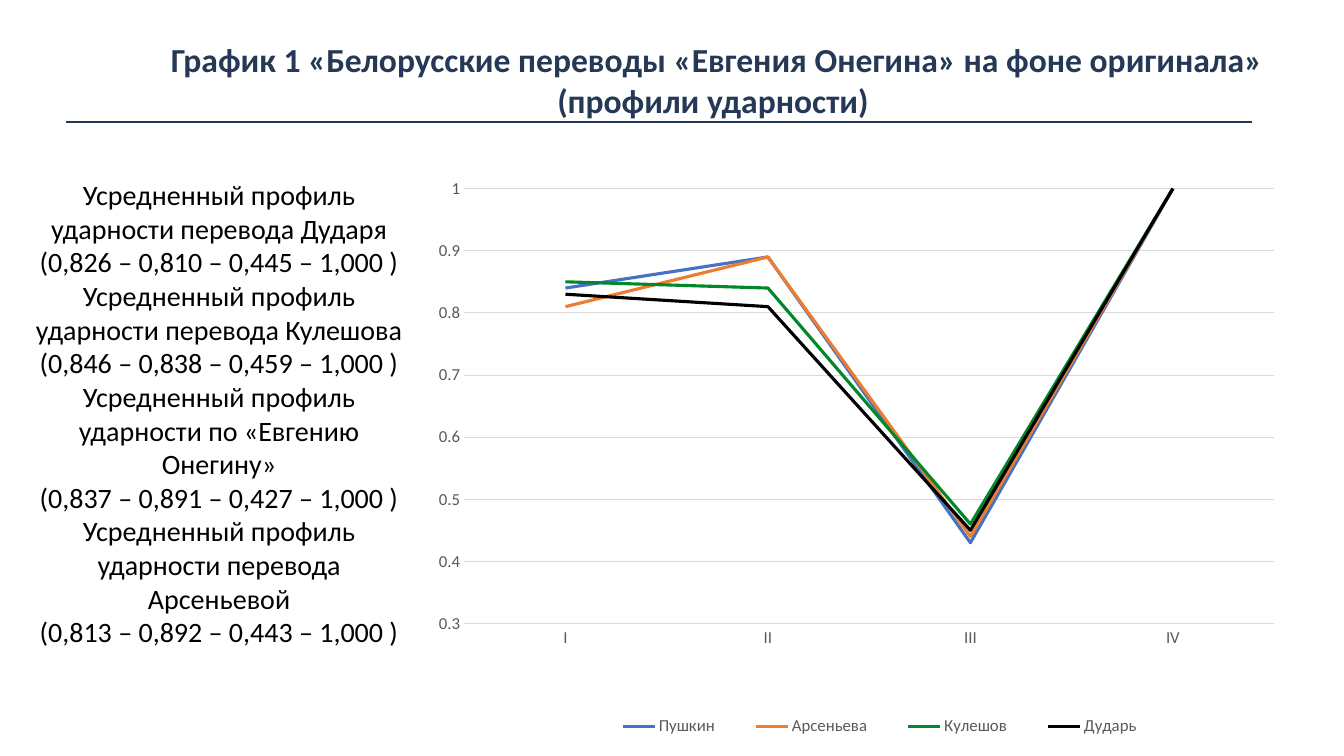
from lxml import etree
from pptx import Presentation
from pptx.chart.data import CategoryChartData
from pptx.dml.color import RGBColor
from pptx.enum.chart import XL_CHART_TYPE, XL_LEGEND_POSITION, XL_TICK_MARK
from pptx.enum.shapes import MSO_CONNECTOR
from pptx.enum.text import PP_ALIGN
from pptx.oxml.ns import qn
from pptx.util import Pt

LINE_CHART = XL_CHART_TYPE.LINE
BOTTOM = XL_LEGEND_POSITION.BOTTOM
NO_TICK = XL_TICK_MARK.NONE
STRAIGHT = MSO_CONNECTOR.STRAIGHT
CENTER = PP_ALIGN.CENTER

FONT = "Calibri"
NAVY = RGBColor(0x25, 0x39, 0x57)
BLACK = RGBColor(0, 0, 0)
GRAY = RGBColor(0x59, 0x59, 0x59)
PALE = RGBColor(0xD9, 0xD9, 0xD9)
BLUE = RGBColor(0x44, 0x72, 0xC4)
ORANGE = RGBColor(0xED, 0x7D, 0x31)
GREEN = RGBColor(0x00, 0x88, 0x2B)

TITLE = "График 1 «Белорусские переводы «Евгения Онегина» на фоне оригинала» (профили ударности) "
FEET = ("I", "II", "III", "IV")
SERIES = (
    ("Пушкин", BLUE, (0.84, 0.89, 0.43, 1)),
    ("Арсеньева", ORANGE, (0.81, 0.89, 0.44, 1)),
    ("Кулешов", GREEN, (0.85, 0.84, 0.46, 1)),
    ("Дударь", BLACK, (0.83, 0.81, 0.45, 1)),
)
PROFILES = (
    ("перевода Дударя", "(0,826 – 0,810 – 0,445 – 1,000 )"),
    ("перевода Кулешова", "(0,846 – 0,838 – 0,459 – 1,000 )"),
    ("по «Евгению Онегину»", "(0,837 – 0,891 – 0,427 – 1,000 )"),
    ("перевода Арсеньевой", "(0,813 – 0,892 – 0,443 – 1,000 )"),
)


def set_font(font, size, color, bold=False):
    font.name, font.size, font.bold = FONT, Pt(size), bold
    font.color.rgb = color


def set_line(line, color, width):
    line.color.rgb = color
    line.width = Pt(width)


def add_text(slide, box, lines, inset, size, color, bold=False):
    frame = slide.shapes.add_textbox(*map(Pt, box)).text_frame
    frame.word_wrap = True
    frame.margin_left = frame.margin_right = Pt(inset)
    frame.margin_top = frame.margin_bottom = Pt(inset)
    frame.text = "\n".join(lines)
    for para in frame.paragraphs:
        para.alignment = CENTER
        for run in para.runs:
            set_font(run.font, size, color, bold)


def add_rule(slide, left, right, top):
    ends = map(Pt, (left, top, right, top))
    rule = slide.shapes.add_connector(STRAIGHT, *ends)
    set_line(rule.line, NAVY, 1.25)
    etree.SubElement(rule._element.spPr, qn("a:effectLst"))


def set_layout(part, after, box, inner=False):
    """Place a chart part by fractions of the chart, right after a given child."""
    for old in part.findall(qn("c:layout")):
        part.remove(old)
    layout = etree.Element(qn("c:layout"))
    manual = etree.SubElement(layout, qn("c:manualLayout"))
    items = [("layoutTarget", "inner")] if inner else []
    items += [("xMode", "edge"), ("yMode", "edge")]
    items += zip("xywh", map(str, box))
    for tag, val in items:
        etree.SubElement(manual, qn("c:" + tag)).set("val", val)
    if after is None:
        part.insert(0, layout)
    else:
        after.addnext(layout)


def style_axis(axis):
    axis.major_tick_mark = axis.minor_tick_mark = NO_TICK
    set_font(axis.tick_labels.font, 12, GRAY)


def add_graph(slide, box):
    data = CategoryChartData()
    data.categories = FEET
    for name, _, vals in SERIES:
        data.add_series(name, vals)
    chart = slide.shapes.add_chart(LINE_CHART, *map(Pt, box), data).chart
    set_font(chart.font, 10, BLACK)
    chart.has_title = False

    plot = chart.plots[0]
    plot.vary_by_categories = False
    for line, (_, color, _) in zip(plot.series, SERIES):
        line.smooth = False
        set_line(line.format.line, color, 2.25)

    feet, scale = chart.category_axis, chart.value_axis
    style_axis(feet)
    style_axis(scale)
    set_line(feet.format.line, PALE, 0.75)
    scale.format.line.fill.background()
    scale.minimum_scale, scale.maximum_scale, scale.major_unit = 0.3, 1, 0.1
    scale.has_major_gridlines = True
    set_line(scale.major_gridlines.format.line, PALE, 0.75)

    chart.has_legend = True
    legend = chart.legend
    legend.position = BOTTOM
    legend.include_in_layout = False
    set_font(legend.font, 12, GRAY)
    key = legend._element
    set_layout(key, key.find(qn("c:legendPos")), (0.2, 0.85, 0.66, 0.05))
    area = chart._chartSpace.chart.plotArea
    set_layout(area, None, (0.06, 0.05, 0.92, 0.67), inner=True)
    set_layout(area, None, (0.061, 0.052, 0.914, 0.666), inner=True)


def main():
    deck = Presentation()
    deck.slide_width, deck.slide_height = Pt(960), Pt(540)
    slide = deck.slides.add_slide(deck.slide_layouts[6])
    add_text(slide, (116, 25, 792, 35), [TITLE], 3, 24, NAVY, bold=True)
    add_rule(slide, 47.5, 894, 87)
    lines = [text for whose, nums in PROFILES
             for text in ("Усредненный профиль ударности " + whose, nums)]
    add_text(slide, (20, 122, 273, 399), lines, 5, 20, BLACK)
    add_graph(slide, (293, 110.5, 633, 466.5))
    deck.save("out.pptx")


if __name__ == "__main__":
    main()
